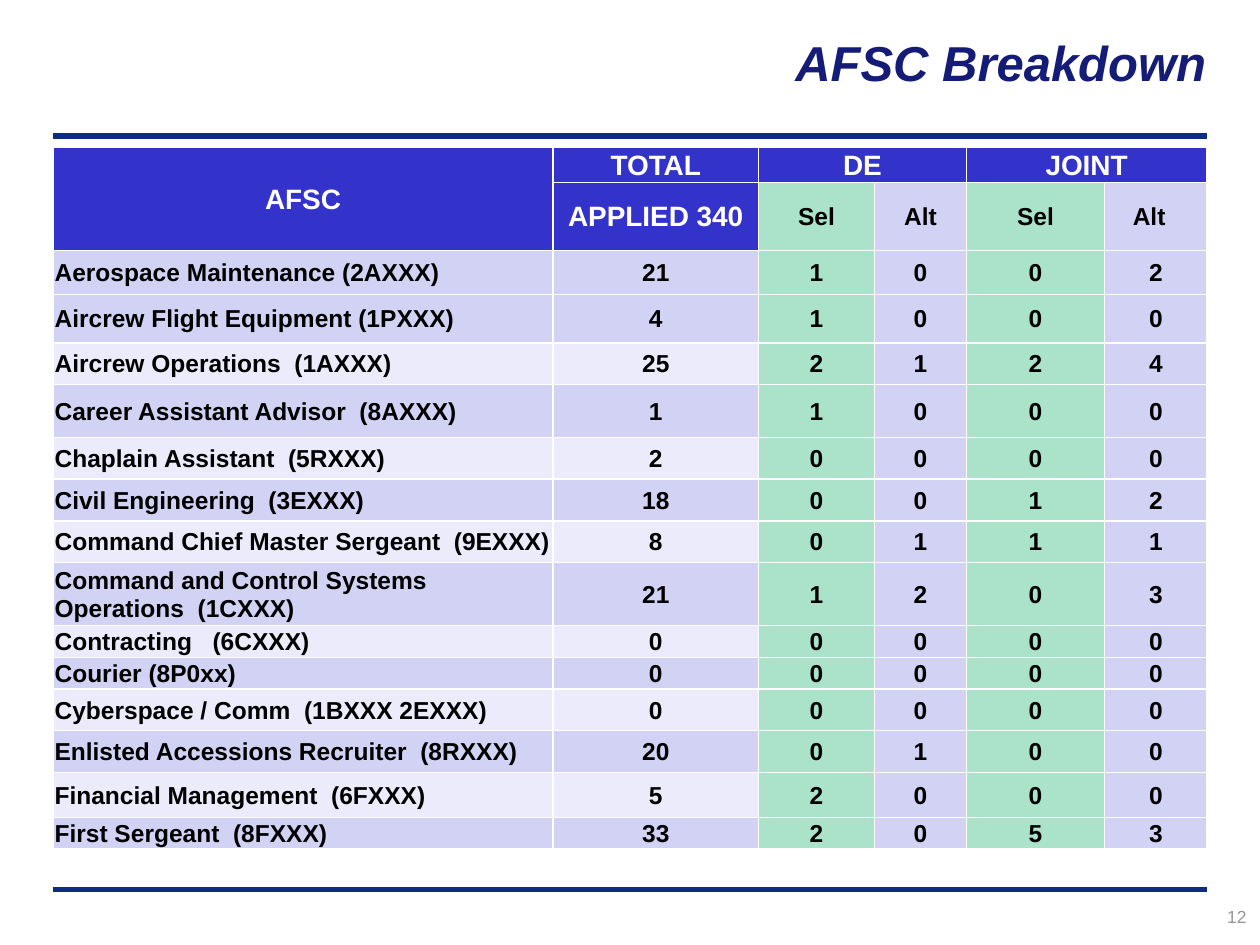
from dataclasses import dataclass

from lxml import etree
from pptx import Presentation
from pptx import util as u
from pptx.dml.color import RGBColor
from pptx.enum import shapes, text
from pptx.oxml import ns


@dataclass(frozen=True)
class Theme:
    font: str = "Arial"
    title: str = "151C77"
    rule: str = "0C2D83"
    number: str = "969696"
    header: str = "3333CC"
    white: str = "FFFFFF"
    black: str = "000000"
    selected: str = "AAE2CA"
    band: str = "D2D2F4"
    light_band: str = "ECEBFB"
    title_size: int = 28
    header_size: int = 16
    body_size: int = 14
    number_size: int = 10


theme = Theme()
align = text.PP_ALIGN


def write(frame, wording, size, color, alignment, bold=True, italic=False):
    paragraph = frame.paragraphs[0]
    paragraph.alignment = alignment
    run = paragraph.add_run()
    run.text = wording
    run.font.name = theme.font
    run.font.size = u.Pt(size)
    run.font.bold = bold
    run.font.italic = italic
    run.font.color.rgb = RGBColor.from_string(color)


def style_cell(cell, fill):
    """Give the cell white borders, narrow margins and a solid fill."""
    properties = cell._tc.get_or_add_tcPr()
    for side in ("a:lnL", "a:lnR", "a:lnT", "a:lnB"):
        border = etree.SubElement(properties, ns.qn(side), w=str(u.Pt(1)))
        solid = etree.SubElement(border, ns.qn("a:solidFill"))
        etree.SubElement(solid, ns.qn("a:srgbClr"), val=theme.white)
    cell.fill.solid()
    cell.fill.fore_color.rgb = RGBColor.from_string(fill)
    cell.margin_left = cell.margin_right = cell.margin_top = u.Cm(0.03)
    cell.margin_bottom = 0
    cell.vertical_anchor = text.MSO_ANCHOR.MIDDLE


prs = Presentation()
prs.slide_width, prs.slide_height = u.Cm(25.4), u.Cm(19.05)
slide = prs.slides.add_slide(prs.slide_layouts[6])

# Rules above and below the table
for rule_y in (17.93, 2.74):
    rule = slide.shapes.add_connector(
        shapes.MSO_CONNECTOR.STRAIGHT,
        u.Cm(1.07), u.Cm(rule_y), u.Cm(24.33), u.Cm(rule_y))
    rule.line.color.rgb = RGBColor.from_string(theme.rule)
    rule.line.width = u.Pt(3)
    etree.SubElement(rule._element.spPr, ns.qn("a:effectLst"))

# Title and slide number
title = slide.shapes.add_textbox(u.Cm(4.24), u.Cm(0.43), u.Cm(20.32), u.Cm(1.27)).text_frame
title.word_wrap = True
title.margin_top = u.Cm(0.22)
write(title, "AFSC Breakdown", theme.title_size, theme.title, align.RIGHT, italic=True)

number = slide.shapes.add_textbox(u.Cm(22.2), u.Cm(18.14), u.Cm(3.18), u.Cm(0.84)).text_frame
number.word_wrap = True
write(number, "12", theme.number_size, theme.number, align.RIGHT, bold=False)

# AFSC, applied, DE selected, DE alternate, joint selected, joint alternate
specialties = [
    ("Aerospace Maintenance (2AXXX)", 21, 1, 0, 0, 2),
    ("Aircrew Flight Equipment (1PXXX)", 4, 1, 0, 0, 0),
    ("Aircrew Operations  (1AXXX)", 25, 2, 1, 2, 4),
    ("Career Assistant Advisor  (8AXXX)", 1, 1, 0, 0, 0),
    ("Chaplain Assistant  (5RXXX)", 2, 0, 0, 0, 0),
    ("Civil Engineering  (3EXXX)", 18, 0, 0, 1, 2),
    ("Command Chief Master Sergeant  (9EXXX)", 8, 0, 1, 1, 1),
    ("Command and Control Systems Operations  (1CXXX)", 21, 1, 2, 0, 3),
    ("Contracting   (6CXXX)", 0, 0, 0, 0, 0),
    ("Courier (8P0xx)", 0, 0, 0, 0, 0),
    ("Cyberspace / Comm  (1BXXX 2EXXX)", 0, 0, 0, 0, 0),
    ("Enlisted Accessions Recruiter  (8RXXX)", 20, 0, 1, 0, 0),
    ("Financial Management  (6FXXX)", 5, 2, 0, 0, 0),
    ("First Sergeant  (8FXXX)", 33, 2, 0, 5, 3),
]
headers = [("AFSC", "TOTAL", "DE", "", "JOINT", ""),
           ("", "APPLIED 340", "Sel", "Alt", "Sel", "Alt")]
column_widths = [10.08, 4.14, 2.34, 1.85, 2.79, 2.06]
row_heights = [0.71, 1.37, 0.89, 0.97, 0.84, 1.07, 0.84, 0.84,
               0.84, 1.27, 0.64, 0.64, 0.84, 0.84, 0.91, 0.61]

breakdown = slide.shapes.add_table(
    len(row_heights), len(column_widths), u.Cm(1.07), u.Cm(2.97),
    u.Cm(sum(column_widths)), u.Cm(sum(row_heights))).table
breakdown.first_row = breakdown.horz_banding = False
for column, width in zip(breakdown.columns, column_widths):
    column.width = u.Cm(width)
for row, height in zip(breakdown.rows, row_heights):
    row.height = u.Cm(height)

for first, last in (((0, 0), (1, 0)), ((0, 2), (0, 3)), ((0, 4), (0, 5))):
    breakdown.cell(*first).merge(breakdown.cell(*last))

for r, entries in enumerate(headers + specialties):
    for c, entry in enumerate(entries):
        cell = breakdown.cell(r, c)
        is_header = r == 0 or (r == 1 and c < 2)
        if is_header:
            fill = theme.header
        elif c in (2, 4):
            fill = theme.selected
        elif c < 2 and r > 2 and r % 2 == 0:
            fill = theme.light_band
        else:
            fill = theme.band
        style_cell(cell, fill)
        if entry != "":
            write(cell.text_frame, str(entry),
                  theme.header_size if is_header else theme.body_size,
                  theme.white if is_header else theme.black,
                  align.LEFT if c == 0 and r > 1 else align.CENTER)

# The last "Alt" heading sits a little left of its column's centre
breakdown.cell(1, 5).margin_right = u.Cm(0.3)

prs.save("out.pptx")
